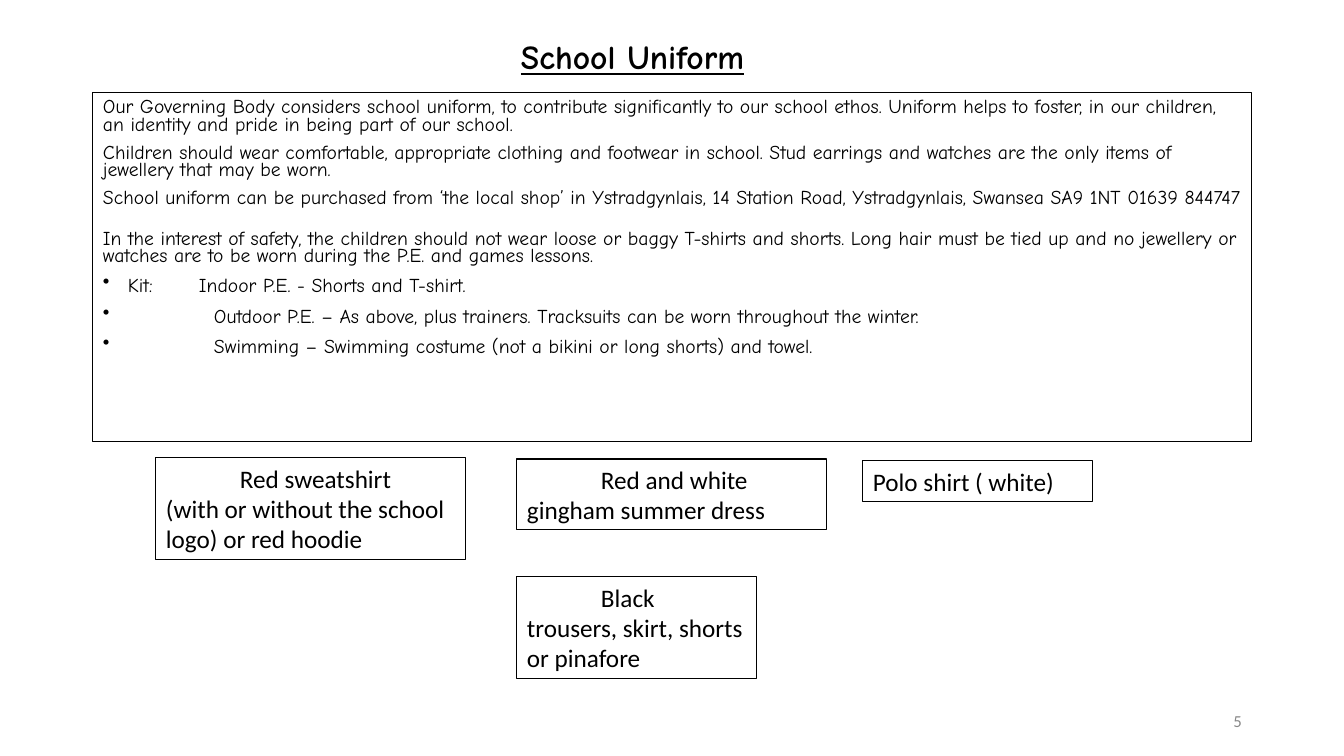
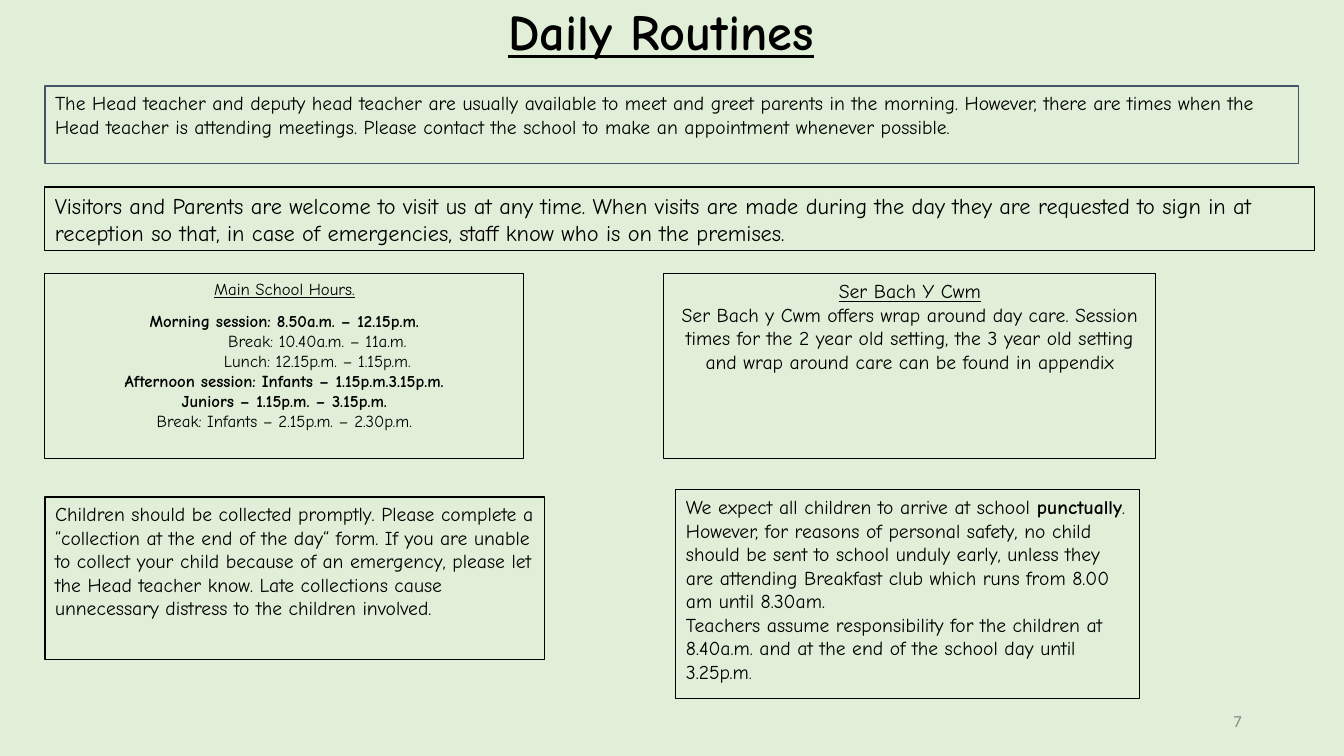
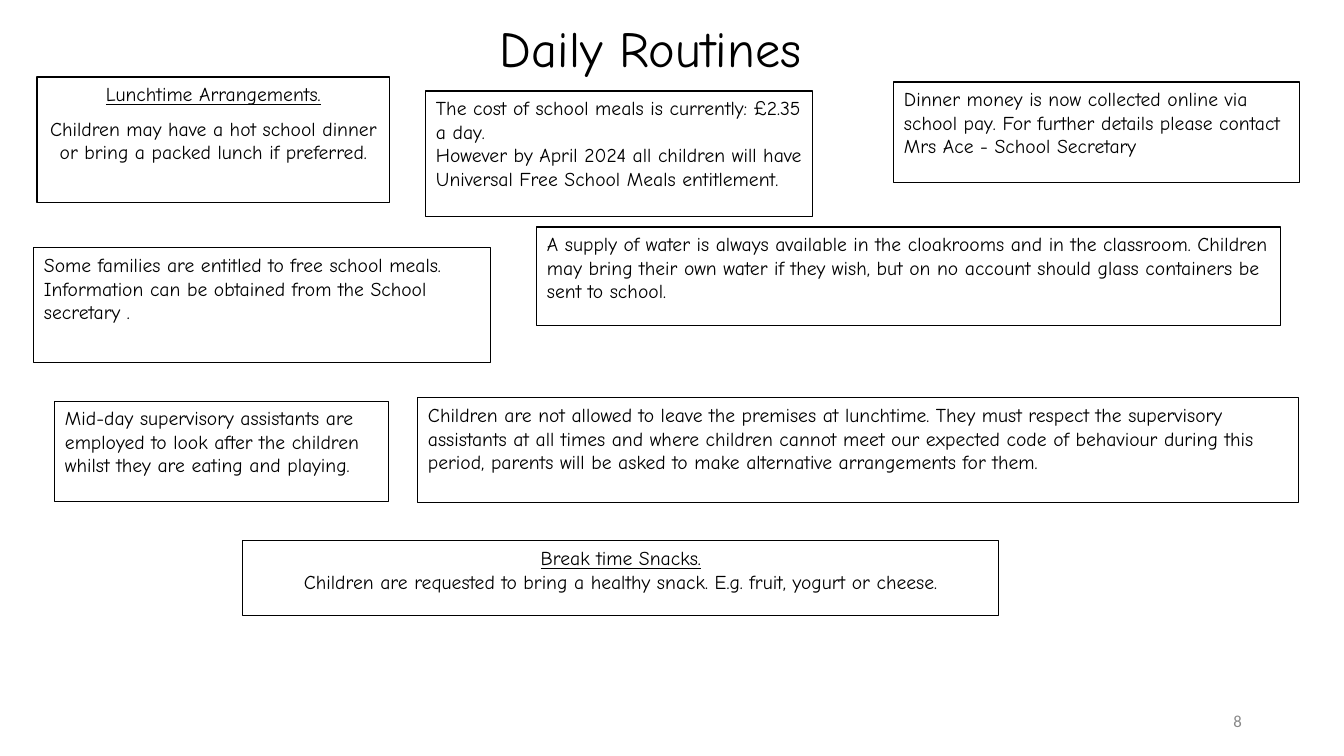
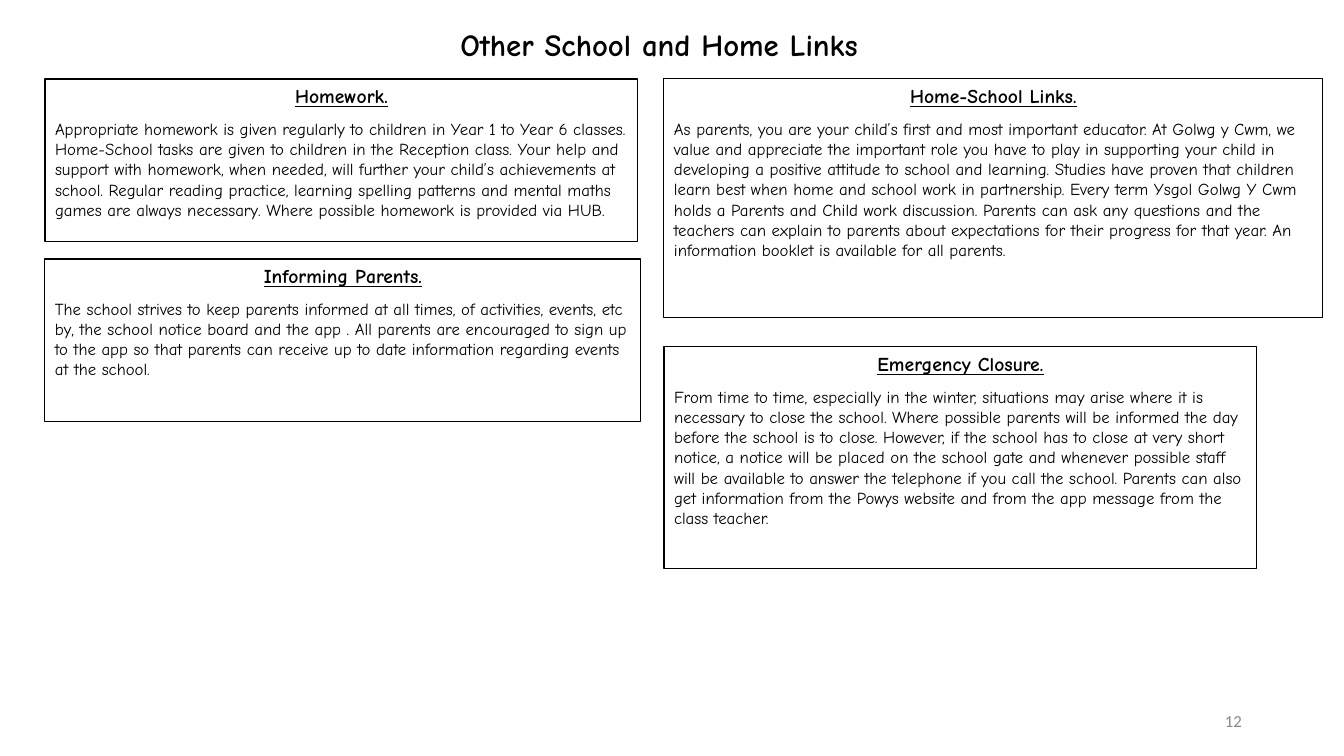
from dataclasses import dataclass, field

from lxml import etree
from pptx import Presentation
from pptx.dml.color import RGBColor
from pptx.enum.shapes import MSO_SHAPE
from pptx.enum.text import MSO_ANCHOR, MSO_AUTO_SIZE, PP_ALIGN
from pptx.oxml.ns import qn
from pptx.util import Pt

PX = 914400 / 100.8
PAGE_WIDTH, PAGE_HEIGHT = 1344, 756
BLACK = RGBColor(0x00, 0x00, 0x00)
WHITE = RGBColor(0xFF, 0xFF, 0xFF)
GREY = RGBColor(0x88, 0x88, 0x88)
SLATE = RGBColor(0x44, 0x54, 0x6A)
PALE_GREEN = RGBColor(0xE1, 0xEF, 0xD8)
LEFT, CENTER, RIGHT = PP_ALIGN.LEFT, PP_ALIGN.CENTER, PP_ALIGN.RIGHT
TOP, MIDDLE = MSO_ANCHOR.TOP, MSO_ANCHOR.MIDDLE
RECTANGLE = MSO_SHAPE.RECTANGLE
NO_AUTOFIT = MSO_AUTO_SIZE.NONE

HAND = "Comic Neue"
PLAIN = "Calibri"
TITLE_ONLY = 5
NUMBER_BOX = (950, 701, 302, 40)
INSET_X, INSET_Y = 10, 5
LABEL_INDENT = 74


@dataclass
class Para:
    """One paragraph; content is a string or a list of (text, font values)."""
    content: object
    size: float = 14
    name: str = HAND
    color: RGBColor = BLACK
    bold: bool = False
    underline: bool = False
    format: dict = field(default_factory=dict)
    left: int = 0
    first: int = 0
    bullet: bool = False
    tab: int = 0


def px(length):
    return round(length * PX)


def set_values(target, values):
    for key, value in values.items():
        setattr(target, key, value)


def set_indents(para, item):
    properties = para._p.get_or_add_pPr()
    properties.set("marL", str(px(item.left)))
    properties.set("indent", str(px(item.first)))
    if item.bullet:
        etree.SubElement(properties, qn("a:buChar")).set("char", "•")
    else:
        etree.SubElement(properties, qn("a:buNone"))
    if item.tab:
        tabs = etree.SubElement(properties, qn("a:tabLst"))
        stop = etree.SubElement(tabs, qn("a:tab"))
        stop.set("pos", str(px(item.tab)))
        stop.set("algn", "l")


def write(shape, items, anchor=TOP, top_inset=INSET_Y):
    frame = shape.text_frame
    set_values(frame, {
        "word_wrap": True, "auto_size": NO_AUTOFIT, "vertical_anchor": anchor,
        "margin_left": px(INSET_X), "margin_right": px(INSET_X),
        "margin_top": px(top_inset), "margin_bottom": px(INSET_Y)})
    for index, item in enumerate(items):
        para = frame.paragraphs[0] if index == 0 else frame.add_paragraph()
        set_indents(para, item)
        set_values(para, {"alignment": LEFT, **item.format})
        content = item.content
        spans = [(content, {})] if isinstance(content, str) else content
        for text, changes in spans:
            span = para.add_run()
            span.text = text
            span.font.color.rgb = item.color
            set_values(span.font, {
                "size": Pt(item.size), "name": item.name, "bold": item.bold,
                "underline": item.underline, **changes})


def place(shape, box):
    names = ("left", "top", "width", "height")
    set_values(shape, dict(zip(names, map(px, box))))


def add_panel(page, box, items, line=BLACK):
    panel = page.shapes.add_shape(RECTANGLE, *map(px, box))
    panel.shadow.inherit = False
    panel.fill.background()
    panel.line.color.rgb = line
    panel.line.width = Pt(0.75)
    write(panel, items)


def add_page(deck, title, box, number, background=WHITE):
    """Start a slide with its title, background and page number."""
    page = deck.slides.add_slide(deck.slide_layouts[TITLE_ONLY])
    page.background.fill.solid()
    page.background.fill.fore_color.rgb = background
    place(page.shapes.title, box)
    write(page.shapes.title, [title], top_inset=0)
    number_box = page.shapes.add_textbox(*map(px, NUMBER_BOX))
    number_para = Para(str(number), 12, PLAIN, GREY, format={"alignment": RIGHT})
    write(number_box, [number_para], MIDDLE)
    return page


def centered(content, size=14, before=None, **style):
    spacing = {} if before is None else {"space_before": Pt(before)}
    return Para(content, size, format={"alignment": CENTER, **spacing}, **style)


def spaced(content, line, before=None, **style):
    spacing = {} if before is None else {"space_before": Pt(before)}
    return Para(content, format={"line_spacing": line, **spacing}, **style)


def heading(text, size=14, bold=False):
    return centered(text, size, bold=bold, underline=True)


def label(text, first=0):
    return Para(text, 18, PLAIN, first=first)


def kit_line(text, left, tab=0):
    return spaced(text, 0.7, 10, left=left, first=-left, bullet=True, tab=tab)


def build_uniform(deck):
    title = centered("School Uniform", 24, bold=True, underline=True)
    page = add_page(deck, title, (307, 36, 651, 45), 5)
    add_panel(page, (93, 93, 1159, 349), [
        spaced("Our Governing Body considers school uniform, to contribute significantly to our "
               "school ethos. Uniform helps to foster, in our children, an identity and pride in "
               "being part of our school.", 0.8),
        spaced("Children should wear comfortable, appropriate clothing and footwear in school. "
               "Stud earrings and watches are the only items of jewellery that may be worn.",
               0.7, 8),
        spaced("School uniform can be purchased from ‘the local shop’ in Ystradgynlais, 14 Station "
               "Road, Ystradgynlais, Swansea SA9 1NT 01639 844747", 0.7, 8),
        spaced("In the interest of safety, the children should not wear loose or baggy T-shirts "
               "and shorts. Long hair must be tied up and no jewellery or watches are to be worn "
               "during the P.E. and games lessons.", 0.7, 18),
        kit_line("Kit:\tIndoor P.E. - Shorts and T-shirt.", 25, tab=96),
        kit_line("Outdoor P.E. – As above, plus trainers. Tracksuits can be worn throughout "
                 "the winter.", 111),
        kit_line("Swimming – Swimming costume (not a bikini or long shorts) and towel.", 111),
    ])
    garments = [
        ((156, 458, 310, 102), [label("Red sweatshirt", LABEL_INDENT),
                                label("(with or without the school logo) or red hoodie")]),
        ((517, 459, 310, 71), [label("Red and white gingham summer dress", LABEL_INDENT)]),
        ((863, 461, 230, 41), [label("Polo shirt ( white)")]),
        ((517, 577, 240, 102), [label("Black trousers, skirt, shorts or pinafore",
                                      LABEL_INDENT)]),
    ]
    for box, items in garments:
        add_panel(page, box, items)


def build_school_day(deck):
    title = Para("Daily Routines", 36, bold=True, underline=True)
    page = add_page(deck, title, (498, 0, 518, 67), 7, PALE_GREEN)
    add_panel(page, (45, 86, 1254, 78), [
        Para("The Head teacher and deputy head teacher are usually available to meet and greet "
             "parents in the morning. However, there are times when the Head teacher is "
             "attending meetings. Please contact the school to make an appointment whenever "
             "possible.")], SLATE)
    panels = [
        ((45, 187, 1270, 64), [
            Para("Visitors and Parents are welcome to visit us at any time. When visits are made "
                 "during the day they are requested to sign in at reception so that, in case of "
                 "emergencies, staff know who is on the premises.", 16)]),
        ((45, 274, 479, 185), [
            heading("Main School Hours.", 12),
            centered("Morning session: 8.50a.m. – 12.15p.m.", 12, 8, bold=True),
            centered("Break: 10.40a.m. – 11a.m.", 12, left=66),
            centered("Lunch: 12.15p.m. – 1.15p.m.", 12, left=66),
            centered("Afternoon session: Infants – 1.15p.m.3.15p.m.", 12, bold=True),
            centered("Juniors – 1.15p.m. – 3.15p.m.", 12, bold=True),
            centered("Break: Infants – 2.15p.m. – 2.30p.m.", 12)]),
        ((664, 274, 492, 185), [
            heading("Ser Bach Y Cwm"),
            centered("Ser Bach y Cwm offers wrap around day care. Session times for the 2 year "
                     "old setting, the 3 year old setting and wrap around care can be found in "
                     "appendix")]),
        ((45, 497, 500, 163), [
            Para("Children should be collected promptly. Please complete a “collection at the "
                 "end of the day“ form. If you are unable to collect your child because of an "
                 "emergency, please let the Head teacher know. Late collections cause "
                 "unnecessary distress to the children involved.")]),
        ((676, 490, 464, 209), [
            Para([("We expect all children to arrive at school ", {}),
                  ("punctually", {"bold": True}),
                  (". However, for reasons of personal safety, no child should be sent to school "
                   "unduly early, unless they are attending Breakfast club which runs from 8.00 "
                   "am until 8.30am.", {})]),
            Para([("Teachers assume responsibility for the children at 8.40a.m. and at the end "
                   "of the school day until 3.25p.m", {}), (".", {"size": Pt(12)})])]),
    ]
    for box, items in panels:
        add_panel(page, box, items)


def build_lunchtime(deck):
    page = add_page(deck, Para("Daily Routines", 36), (490, 17, 371, 67), 8)
    panels = [
        ((37, 77, 353, 126), [
            heading("Lunchtime Arrangements."),
            centered("Children may have a hot school dinner or bring a packed lunch if "
                     "preferred.", before=8)]),
        ((426, 91, 387, 126), [
            Para("The cost of school meals is currently: £2.35 a day."),
            Para("However by April 2024 all children will have Universal Free School Meals "
                 "entitlement.")]),
        ((894, 82, 406, 101), [
            Para("Dinner money is now collected online via school pay. For further details "
                 "please contact Mrs Ace - School Secretary")]),
        ((34, 248, 457, 115), [
            Para("Some families are entitled to free school meals. Information can be obtained "
                 "from the School secretary .")]),
        ((537, 227, 744, 99), [
            Para("A supply of water is always available in the cloakrooms and in the classroom. "
                 "Children may bring their own water if they wish, but on no account should "
                 "glass containers be sent to school.")]),
        ((55, 401, 334, 101), [
            Para("Mid-day supervisory assistants are employed to look after the children whilst "
                 "they are eating and playing.")]),
        ((418, 398, 881, 105), [
            Para("Children are not allowed to leave the premises at lunchtime. They must respect "
                 "the supervisory assistants at all times and where children cannot meet our "
                 "expected code of behaviour during this period, parents will be asked to make "
                 "alternative arrangements for them.")]),
        ((243, 541, 756, 75), [
            heading("Break time Snacks."),
            centered("Children are requested to bring a healthy snack. E.g. fruit, yogurt or "
                     "cheese.")]),
    ]
    for box, items in panels:
        add_panel(page, box, items)


def build_home_links(deck):
    title = centered("Other School and Home Links", 22, bold=True)
    page = add_page(deck, title, (275, 26, 768, 57), 12)
    topics = [
        ((45, 79, 593, 163), "Homework.",
         "Appropriate homework is given regularly to children in Year 1 to Year 6 classes. "
         "Home-School tasks are given to children in the Reception class. Your help and support "
         "with homework, when needed, will further your child’s achievements at school. Regular "
         "reading practice, learning spelling patterns and mental maths games are always "
         "necessary. Where possible homework is provided via HUB."),
        ((664, 79, 659, 239), "Home-School Links.",
         "As parents, you are your child’s first and most important educator. At Golwg y Cwm, we "
         "value and appreciate the important role you have to play in supporting your child in "
         "developing a positive attitude to school and learning. Studies have proven that "
         "children learn best when home and school work in partnership. Every term Ysgol Golwg Y "
         "Cwm holds a Parents and Child work discussion. Parents can ask any questions and the "
         "teachers can explain to parents about expectations for their progress for that year. "
         "An information booklet is available for all parents."),
        ((45, 259, 596, 163), "Informing Parents.",
         "The school strives to keep parents informed at all times, of activities, events, etc "
         "by, the school notice board and the app . All parents are encouraged to sign up to "
         "the app so that parents can receive up to date information regarding events at the "
         "school."),
        ((664, 347, 593, 222), "Emergency Closure.",
         "From time to time, especially in the winter, situations may arise where it is "
         "necessary to close the school. Where possible parents will be informed the day before "
         "the school is to close. However, if the school has to close at very short notice, a "
         "notice will be placed on the school gate and whenever possible staff will be available "
         "to answer the telephone if you call the school. Parents can also get information from "
         "the Powys website and from the app message from the class teacher."),
    ]
    for box, topic, text in topics:
        body = Para(text, 12, format={"space_before": Pt(8)})
        add_panel(page, box, [heading(topic, bold=True), body])


def main():
    deck = Presentation()
    deck.slide_width, deck.slide_height = px(PAGE_WIDTH), px(PAGE_HEIGHT)
    for build in (build_uniform, build_school_day, build_lunchtime, build_home_links):
        build(deck)
    deck.save("out.pptx")


if __name__ == "__main__":
    main()
